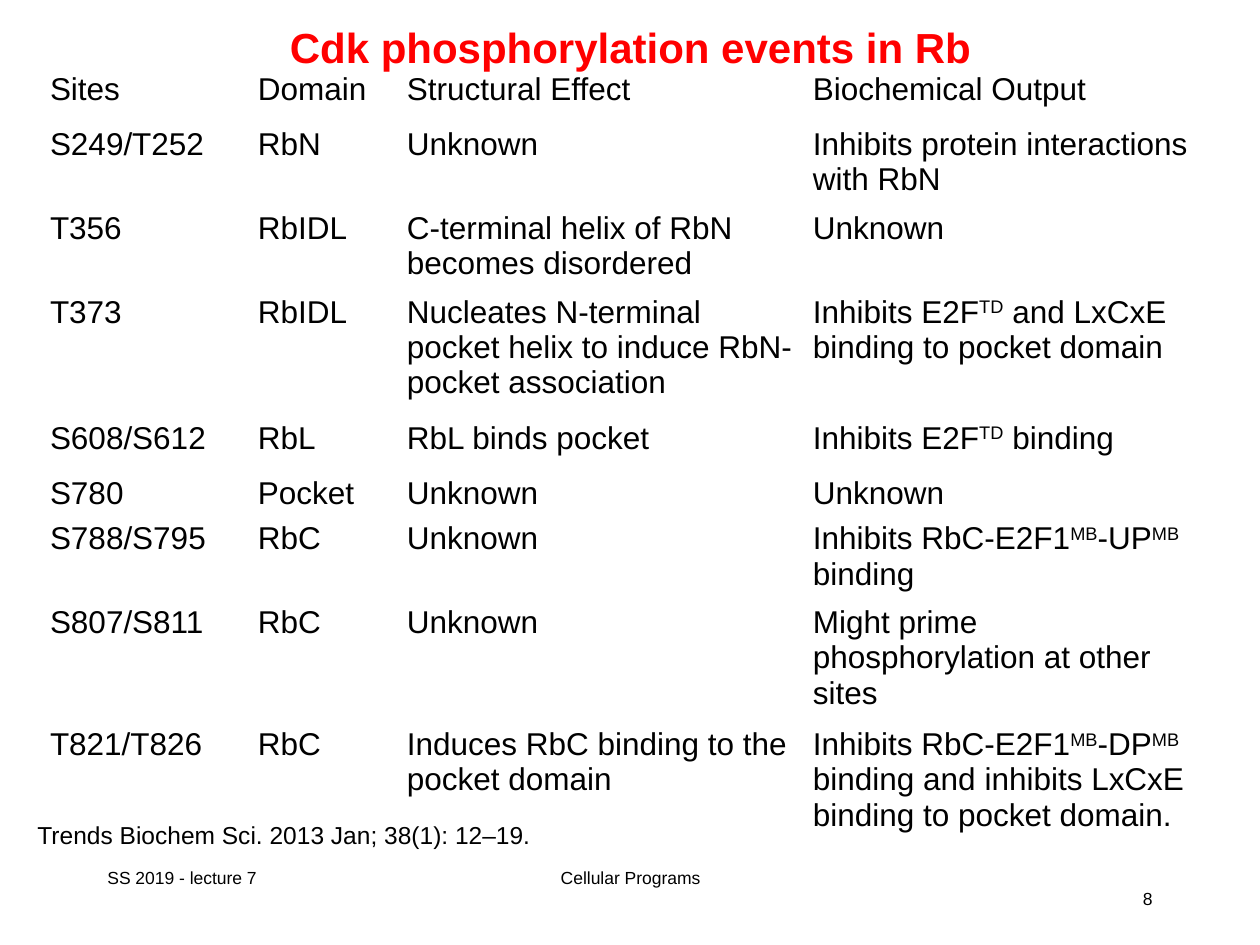
"""Build a slide with a table of Cdk phosphorylation events in Rb."""
from dataclasses import dataclass

import lxml.etree
import pptx
import pptx.dml.color
import pptx.enum.text
import pptx.oxml.ns
import pptx.util

PX = 914400 // 126
ALIGN = pptx.enum.text.PP_ALIGN
ANCHOR = pptx.enum.text.MSO_ANCHOR
NO_GRID_STYLE = "{2D5ABB26-0587-4C30-8999-92F81FD0307C}"


@dataclass(frozen=True)
class Theme:
    font: str = "Arial"
    ink: str = "000000"
    accent: str = "FF0000"
    title: int = 24
    body: int = 18
    source: int = 14
    footer: int = 10


theme = Theme()


def format_runs(para, size, color=theme.ink, bold=False):
    for span in para.runs:
        span.font.name = theme.font
        span.font.size = pptx.util.Pt(size)
        span.font.bold = bold
        span.font.color.rgb = pptx.dml.color.RGBColor.from_string(color)


def clear_borders(cell):
    properties = cell._tc.get_or_add_tcPr()
    for index, side in enumerate(["a:lnL", "a:lnR", "a:lnT", "a:lnB"]):
        border = lxml.etree.Element(pptx.oxml.ns.qn(side), w="0")
        lxml.etree.SubElement(border, pptx.oxml.ns.qn("a:noFill"))
        properties.insert(index, border)


deck = pptx.Presentation()
deck.slide_width = 1260 * PX
deck.slide_height = 945 * PX
page = deck.slides.add_slide(deck.slide_layouts[5])

title = page.shapes.title
title.left, title.top, title.width, title.height = 95 * PX, 26 * PX, 1071 * PX, 42 * PX
title.text_frame.text = "Cdk phosphorylation events in Rb"
title.text_frame.auto_size = pptx.enum.text.MSO_AUTO_SIZE.NONE
title.text_frame.vertical_anchor = ANCHOR.MIDDLE
title.text_frame.paragraphs[0].alignment = ALIGN.CENTER
format_runs(title.text_frame.paragraphs[0], theme.title, theme.accent, True)

captions = [
    ("Trends Biochem Sci. 2013 Jan; 38(1): 12–19.", 25, 808, 942, 45, theme.source, ALIGN.LEFT, 6, 1.2),
    ("SS 2019 - lecture 7", 95, 861, 262, 63, theme.footer, ALIGN.LEFT, 6, 1),
    ("8", 903, 861, 262, 63, theme.footer, ALIGN.RIGHT, 27, 1),
    ("Cellular Programs", 431, 861, 399, 63, theme.footer, ALIGN.CENTER, 6, 1),
]
for text, left, top, width, height, size, alignment, inset, spacing in captions:
    box = page.shapes.add_textbox(left * PX, top * PX, width * PX, height * PX)
    box.text_frame.word_wrap = True
    box.text_frame.margin_top = inset * PX
    box.text_frame.text = text
    para = box.text_frame.paragraphs[0]
    para.alignment = alignment
    para.line_spacing = spacing
    format_runs(para, size)

column_widths = [208, 149, 406, 400]
row_heights = [55, 84, 83, 126, 55, 46, 83, 122, 150]
events = [
    ["Sites", "Domain", "Structural Effect", "Biochemical Output"],
    ["S249/T252", "RbN", "Unknown", "Inhibits protein interactions with RbN"],
    ["T356", "RbIDL", "C-terminal helix of RbN becomes disordered", "Unknown"],
    ["T373", "RbIDL", "Nucleates N-terminal pocket helix to induce RbN-pocket association",
     "Inhibits E2F^TD^ and LxCxE binding to pocket domain"],
    ["S608/S612", "RbL", "RbL binds pocket", "Inhibits E2F^TD^ binding"],
    ["S780", "Pocket", "Unknown", "Unknown"],
    ["S788/S795", "RbC", "Unknown", "Inhibits RbC-E2F1^MB^-UP^MB^ binding"],
    ["S807/S811", "RbC", "Unknown", "Might prime phosphorylation at other sites"],
    ["T821/T826", "RbC", "Induces RbC binding to the pocket domain",
     "Inhibits RbC-E2F1^MB^-DP^MB^ binding and inhibits LxCxE binding to pocket domain."],
]
table = page.shapes.add_table(
    len(events), len(column_widths), 42 * PX, 68 * PX,
    sum(column_widths) * PX, sum(row_heights) * PX,
).table
table.first_row = False
table.horz_banding = False
table._tbl.tblPr.find(pptx.oxml.ns.qn("a:tableStyleId")).text = NO_GRID_STYLE
for column, width in zip(table.columns, column_widths):
    column.width = width * PX
for row, height, texts in zip(table.rows, row_heights, events):
    row.height = height * PX
    for cell, text in zip(row.cells, texts):
        cell.fill.background()
        clear_borders(cell)
        cell.margin_left = cell.margin_right = 8 * PX
        cell.margin_top = cell.margin_bottom = 4 * PX
        cell.vertical_anchor = ANCHOR.TOP
        para = cell.text_frame.paragraphs[0]
        for index, part in enumerate(text.split("^")):
            span = para.add_run()
            span.text = part
            if index % 2:
                span.font._element.set("baseline", "30000")
        format_runs(para, theme.body)

deck.save("out.pptx")
